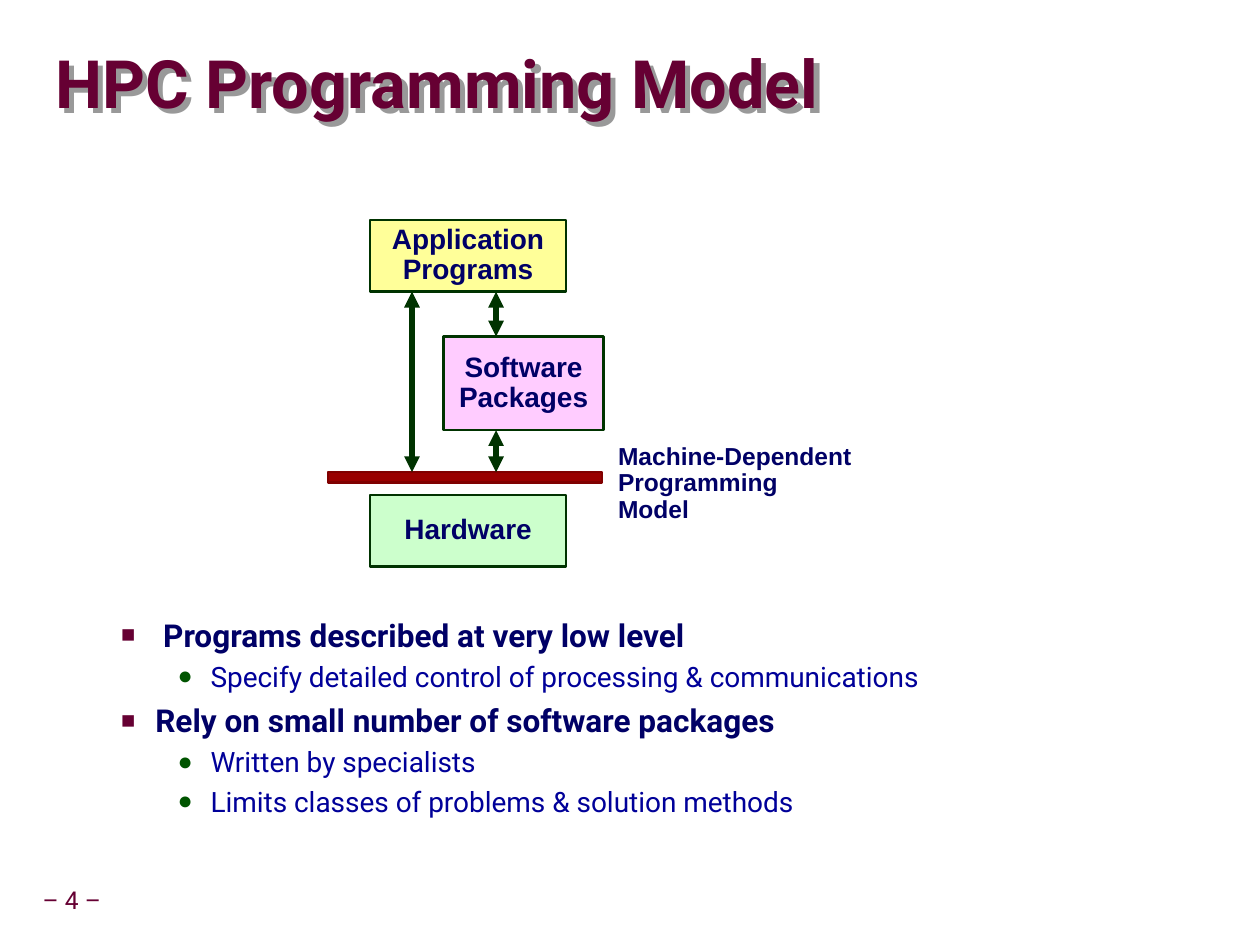
import pptx
import pptx.util
import pptx.dml.color
import pptx.enum.shapes
import pptx.enum.text
import pptx.oxml
import pptx.oxml.ns

Pt = pptx.util.Pt
RGBColor = pptx.dml.color.RGBColor
ALIGN = pptx.enum.text.PP_ALIGN
ANCHOR = pptx.enum.text.MSO_ANCHOR

MAROON = RGBColor(0x66, 0x00, 0x33)
NAVY = RGBColor(0x00, 0x00, 0x66)
BLUE = RGBColor(0x00, 0x00, 0x99)
BULLET_GREEN = RGBColor(0x00, 0x54, 0x00)
DARK_GREEN = RGBColor(0x00, 0x33, 0x00)
YELLOW = RGBColor(0xFF, 0xFF, 0x99)
PINK = RGBColor(0xFF, 0xCC, 0xFF)
MINT = RGBColor(0xCC, 0xFF, 0xCC)
RED = RGBColor(0x99, 0x00, 0x00)
DARK_RED = RGBColor(0x80, 0x00, 0x00)
GREY = RGBColor(0x99, 0x99, 0x99)

BULLETS = [
    (1, " Programs described at very low level"),
    (2, "Specify detailed control of processing & communications"),
    (1, "Rely on small number of software packages"),
    (2, "Written by specialists"),
    (2, "Limits classes of problems & solution methods"),
]
LEVELS = {
    1: dict(size=18, color=NAVY, bold=True, before=4.5, spacing=1.0,
            left=58.5, indent=-19.5, bullet="■", bullet_color=MAROON, scale=75),
    2: dict(size=16, color=BLUE, bold=False, before=2, spacing=1.07,
            left=90, indent=-18.75, bullet="●", bullet_color=BULLET_GREEN, scale=90),
}


def append_xml(parent, xml):
    namespace = pptx.oxml.ns.nsdecls("a")
    parent.append(pptx.oxml.parse_xml(xml.replace(" ", f" {namespace} ", 1)))


def place(shape, left, top, width, height):
    shape.left, shape.top = Pt(left), Pt(top)
    shape.width, shape.height = Pt(width), Pt(height)


def set_frame(frame, margin, anchor, wrap):
    frame.margin_left = frame.margin_right = Pt(margin)
    frame.margin_top = frame.margin_bottom = Pt(margin)
    frame.vertical_anchor = anchor
    frame.word_wrap = wrap
    frame.auto_size = pptx.enum.text.MSO_AUTO_SIZE.NONE


def style(paragraph, name, size, color, bold, align, spacing):
    paragraph.font.name = name
    paragraph.font.size = Pt(size)
    paragraph.font.color.rgb = color
    paragraph.font.bold = bold
    paragraph.alignment = align
    paragraph.line_spacing = spacing


def write(frame, text, name, size, color, bold, align, anchor=ANCHOR.MIDDLE):
    set_frame(frame, 3.6, anchor, False)
    frame.text = text
    for paragraph in frame.paragraphs:
        style(paragraph, name, size, color, bold, align, 0.9)


def add_title(slide, left, top, width, height):
    title = slide.shapes.title
    place(title, left, top, width, height)
    title.text = "HPC Programming Model"
    set_frame(title.text_frame, 0, ANCHOR.MIDDLE, True)
    style(title.text_frame.paragraphs[0], "Roboto", 38, MAROON, True, ALIGN.LEFT, 0.87)
    append_xml(title.element.spPr,
               '<a:effectLst ><a:outerShdw dist="53000" dir="2700000">'
               f'<a:srgbClr val="{GREY}"/></a:outerShdw></a:effectLst>')


def add_bullets(slide, left, top, width, height):
    body = slide.placeholders[1]
    place(body, left, top, width, height)
    frame = body.text_frame
    frame.text = "\n".join(text for _, text in BULLETS)
    set_frame(frame, 3.6, ANCHOR.TOP, True)
    frame.margin_left = frame.margin_right = Pt(7.2)
    for paragraph, (level, _) in zip(frame.paragraphs, BULLETS):
        look = LEVELS[level]
        paragraph.level = level
        style(paragraph, "Roboto", look["size"], look["color"], look["bold"],
              ALIGN.LEFT, look["spacing"])
        paragraph.space_before = Pt(look["before"])
        paragraph.space_after = Pt(0)
        properties = paragraph._p.get_or_add_pPr()
        properties.set("marL", str(Pt(look["left"])))
        properties.set("indent", str(Pt(look["indent"])))
        run_defaults = properties.find(pptx.oxml.ns.qn("a:defRPr"))
        properties.remove(run_defaults)
        append_xml(properties, f'<a:buClr ><a:srgbClr val="{look["bullet_color"]}"/></a:buClr>')
        append_xml(properties, f'<a:buSzPct val="{look["scale"] * 1000}"/>')
        append_xml(properties, '<a:buFont typeface="Arial"/>')
        append_xml(properties, f'<a:buChar char="{look["bullet"]}"/>')
        properties.append(run_defaults)


def add_box(slide, left, top, width, height, fill, line, text=""):
    box = slide.shapes.add_shape(pptx.enum.shapes.MSO_SHAPE.RECTANGLE,
                                 Pt(left), Pt(top), Pt(width), Pt(height))
    box.shadow.inherit = False
    box.fill.solid()
    box.fill.fore_color.rgb = fill
    box.line.color.rgb = line
    box.line.width = Pt(1.5)
    if text:
        write(box.text_frame, text, "Arial", 16, NAVY, True, ALIGN.CENTER)


def add_double_arrow(slide, x, top, bottom):
    arrow = slide.shapes.add_connector(pptx.enum.shapes.MSO_CONNECTOR.STRAIGHT,
                                       Pt(x), Pt(top), Pt(x), Pt(bottom))
    arrow.line.color.rgb = DARK_GREEN
    arrow.line.width = Pt(3)
    line = arrow.line._get_or_add_ln()
    for end in ("headEnd", "tailEnd"):
        append_xml(line, f'<a:{end} type="triangle"/>')
    append_xml(arrow._element.spPr, "<a:effectLst />")


def add_text(slide, left, top, width, height, text, *look):
    label = slide.shapes.add_textbox(Pt(left), Pt(top), Pt(width), Pt(height))
    write(label.text_frame, text, *look)


def add_diagram(slide, left, top):
    bar_top = top + 144
    layer_height = 41
    package_top, package_height = top + 66.5, 53.5
    add_box(slide, left, bar_top, 156.5, 6, RED, DARK_RED)
    add_box(slide, left + 24, top + 157, 112, layer_height, MINT, DARK_GREEN, "Hardware")
    add_text(slide, left + 162, top + 124.5, 142.5, 53, "Machine-Dependent\nProgramming\vModel",
             "Arial", 14, NAVY, True, ALIGN.LEFT, ANCHOR.TOP)
    add_box(slide, left + 66, package_top, 91.5, package_height, PINK, DARK_GREEN,
            "Software\nPackages")
    add_box(slide, left + 24, top, 112, layer_height, YELLOW, DARK_GREEN,
            "Application\nPrograms")
    add_double_arrow(slide, left + 96, top + layer_height, package_top)
    add_double_arrow(slide, left + 48, top + layer_height, bar_top)
    add_double_arrow(slide, left + 96, package_top + package_height, bar_top)


def main():
    presentation = pptx.Presentation()
    presentation.slide_width = Pt(719.28)
    presentation.slide_height = Pt(539.28)
    slide = presentation.slides.add_slide(presentation.slide_layouts[1])
    add_text(slide, 17.3, 503.3, 47.5, 22.3, "– 4 –",
             "Roboto", 14, MAROON, False, ALIGN.CENTER)
    add_title(slide, 31.7, 19.4, 685.4, 61.2)
    add_bullets(slide, 23, 347.8, 653, 159)
    add_diagram(slide, 187.2, 125.5)
    presentation.save("out.pptx")


if __name__ == "__main__":
    main()
